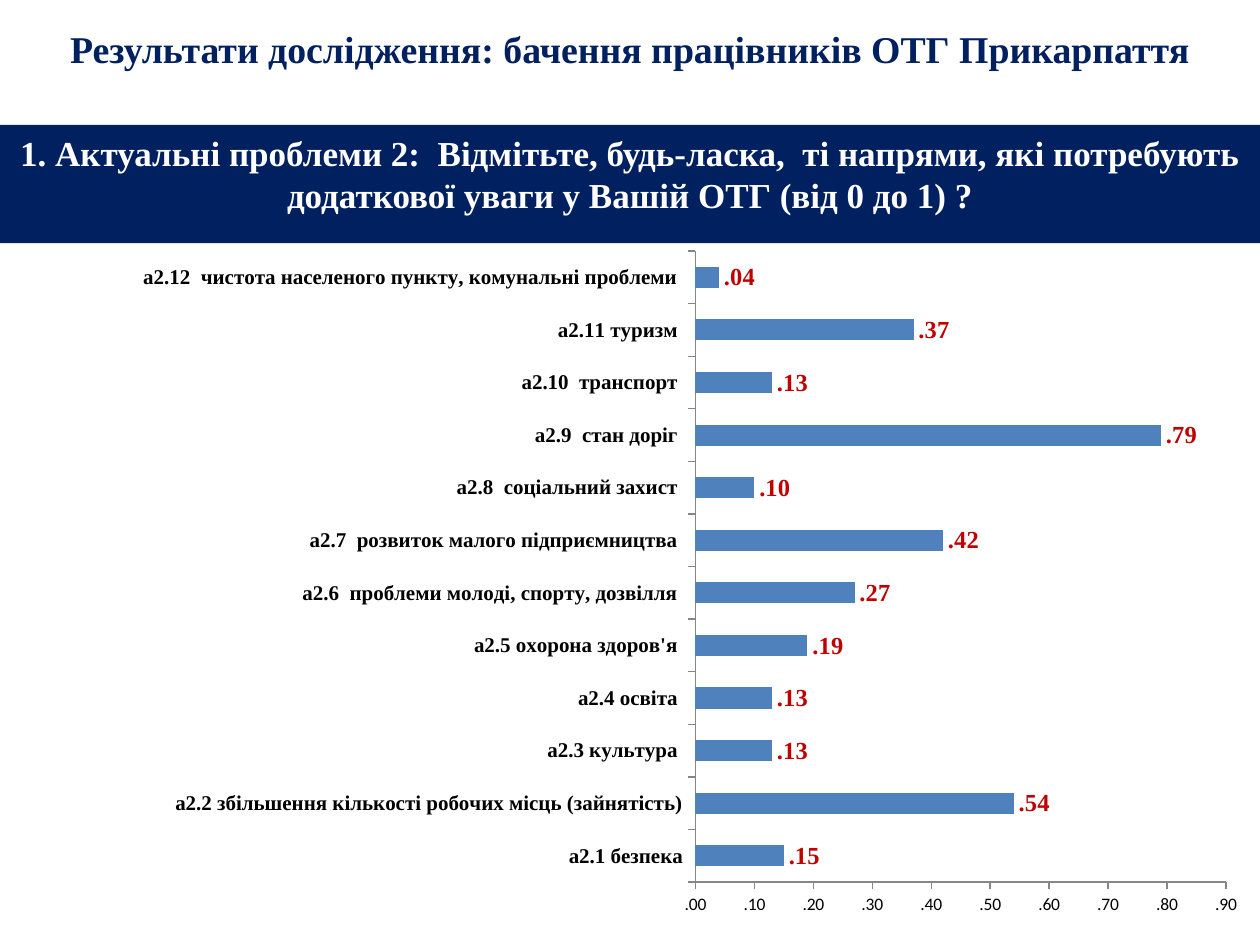
from lxml.etree import SubElement
from pptx import Presentation
from pptx.chart.data import CategoryChartData
from pptx.dml.color import RGBColor
from pptx.enum.chart import XL_CHART_TYPE, XL_LABEL_POSITION, XL_TICK_MARK
from pptx.enum.text import MSO_ANCHOR, MSO_AUTO_SIZE, PP_ALIGN
from pptx.oxml import parse_xml
from pptx.oxml.ns import nsdecls, qn
from pptx.util import Inches, Pt

SERIF = "Times New Roman"
NAVY = "002060"
NUMBER_FORMAT = "####.00"
PLOT_AREA = {"x": 0.552, "y": 0.039, "w": 0.421, "h": 0.874}

TITLE = "Результати дослідження: бачення працівників ОТГ Прикарпаття"
QUESTION = ("1. Актуальні проблеми 2:  Відмітьте, будь-ласка,  ті напрями, "
            "які потребують додаткової уваги у Вашій ОТГ (від 0 до 1) ?")
PRIORITIES = [
    ("a2.1 безпека", 0.15),
    ("a2.2 збільшення кількості робочих місць (зайнятість)", 0.54),
    ("a2.3 культура ", 0.13),
    ("a2.4 освіта ", 0.13),
    ("a2.5 охорона здоров'я ", 0.19),
    ("a2.6  проблеми молоді, спорту, дозвілля ", 0.27),
    ("a2.7  розвиток малого підприємництва ", 0.42),
    ("a2.8  соціальний захист ", 0.1),
    ("a2.9  стан доріг ", 0.79),
    ("a2.10  транспорт ", 0.13),
    ("a2.11 туризм ", 0.37),
    ("a2.12  чистота населеного пункту, комунальні проблеми ", 0.04),
]


def color(value):
    return RGBColor.from_string(value)


def set_attributes(target, values):
    for name, value in values.items():
        setattr(target, name, value)


def format_font(font, size, hex_color, bold=True, name=SERIF):
    set_attributes(font, {"size": Pt(size), "bold": bold, "name": name})
    font.color.rgb = color(hex_color)


def fill_placeholder(box, text, top, height, anchor, size, hex_color):
    """Place a full-width placeholder and give it one centred paragraph."""
    set_attributes(box, {"left": 0, "top": Inches(top),
                         "width": Inches(10), "height": Inches(height)})
    set_attributes(box.text_frame, {"word_wrap": True, "vertical_anchor": anchor,
                                    "auto_size": MSO_AUTO_SIZE.NONE})
    para = box.text_frame.paragraphs[0]
    para.alignment = PP_ALIGN.CENTER
    span = para.add_run()
    span.text = text
    format_font(span.font, size, hex_color)
    return para


def remove_bullet(para):
    properties = para._p.get_or_add_pPr()
    properties.set("marL", "0")
    properties.set("indent", "0")
    SubElement(properties, qn("a:buNone"))


def set_plot_area(chart):
    """Fix the inner plot area as fractions of the chart."""
    plot_area = chart._chartSpace.chart.plotArea
    for layout in plot_area.findall(qn("c:layout")):
        plot_area.remove(layout)
    sizes = "".join(f'<c:{key} val="{value}"/>' for key, value in PLOT_AREA.items())
    plot_area.insert(0, parse_xml(
        f'<c:layout {nsdecls("c")}><c:manualLayout><c:layoutTarget val="inner"/>'
        f'<c:xMode val="edge"/><c:yMode val="edge"/>{sizes}'
        '</c:manualLayout></c:layout>'))


def format_axis(axis):
    set_attributes(axis, {"has_major_gridlines": False,
                          "major_tick_mark": XL_TICK_MARK.OUTSIDE,
                          "minor_tick_mark": XL_TICK_MARK.NONE})
    axis.format.line.color.rgb = color("868686")


def add_priority_chart(page):
    data = CategoryChartData()
    data.categories = [label for label, _ in PRIORITIES]
    data.add_series("Series 1", [value for _, value in PRIORITIES])
    chart = page.shapes.add_chart(XL_CHART_TYPE.BAR_CLUSTERED, 0, Inches(1.77),
                                  Inches(10), Inches(5.73), data).chart
    set_attributes(chart, {"has_legend": False, "has_title": False})
    format_font(chart.font, 10, "000000", bold=False, name="Calibri")
    set_plot_area(chart)

    for axis in (chart.category_axis, chart.value_axis):
        format_axis(axis)
    format_font(chart.category_axis.tick_labels.font, 12, "000000")
    set_attributes(chart.value_axis, {"minimum_scale": 0, "maximum_scale": 0.9,
                                      "major_unit": 0.1})
    set_attributes(chart.value_axis.tick_labels,
                   {"number_format": NUMBER_FORMAT, "number_format_is_linked": False})

    plot = chart.plots[0]
    set_attributes(plot, {"gap_width": 150, "vary_by_categories": False})
    series = plot.series[0]
    series.format.fill.solid()
    series.format.fill.fore_color.rgb = color("4F81BD")
    labels = series.data_labels
    set_attributes(labels, {"show_value": True, "number_format": NUMBER_FORMAT,
                            "number_format_is_linked": False,
                            "position": XL_LABEL_POSITION.OUTSIDE_END})
    format_font(labels.font, 14, "C00000")


def main():
    deck = Presentation()
    set_attributes(deck, {"slide_width": Inches(10), "slide_height": Inches(7.5)})
    page = deck.slides.add_slide(deck.slide_layouts[1])

    fill_placeholder(page.shapes.title, TITLE, 0.01, 0.75,
                     MSO_ANCHOR.MIDDLE, 21.6, NAVY)
    banner = page.placeholders[1]
    banner.fill.solid()
    banner.fill.fore_color.rgb = color(NAVY)
    remove_bullet(fill_placeholder(banner, QUESTION, 0.99, 0.94,
                                   MSO_ANCHOR.TOP, 20, "FFFFFF"))
    add_priority_chart(page)
    deck.save("out.pptx")


if __name__ == "__main__":
    main()
